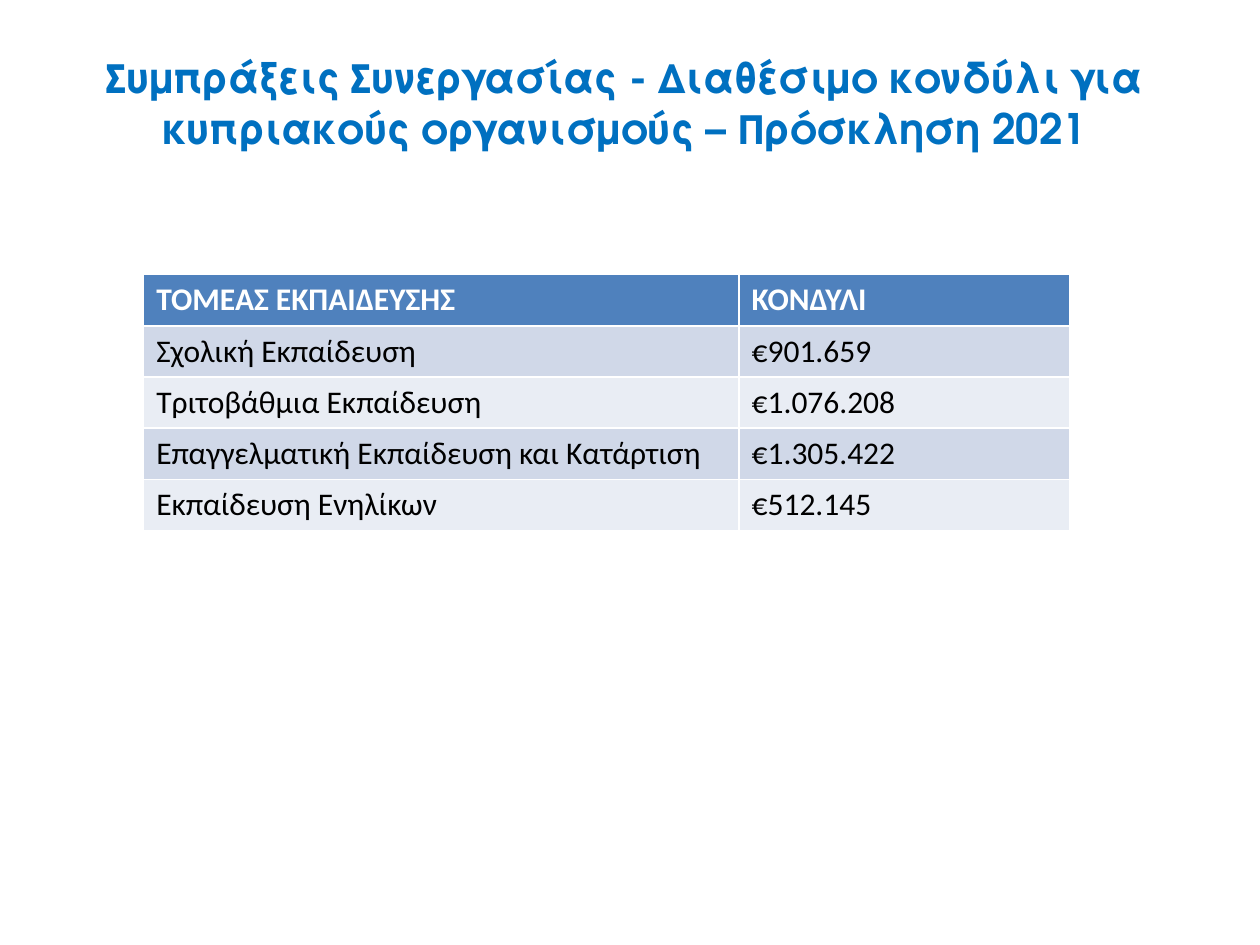
import pptx
import pptx.dml.color
import pptx.enum.text
import pptx.util
from pptx.util import Inches

TITLE = "Συμπράξεις Συνεργασίας - Διαθέσιμο κονδύλι για κυπριακούς οργανισμούς – Πρόσκληση 2021"
HEADINGS = ("ΤΟΜΕΑΣ ΕΚΠΑΙΔΕΥΣΗΣ", "ΚΟΝΔΥΛΙ")
BUDGETS = (
    ("Σχολική Εκπαίδευση", "€901.659"),
    ("Τριτοβάθμια Εκπαίδευση", "€1.076.208"),
    ("Επαγγελματική Εκπαίδευση και Κατάρτιση", "€1.305.422"),
    ("Εκπαίδευση Ενηλίκων", "€512.145"),
)
BANDS = ("D0D8E8", "E9EDF4")
SECTOR_SHARE = 0.643


def color(hex_value):
    """Return the colour for a hex string."""
    return pptx.dml.color.RGBColor.from_string(hex_value)


def style_font(font, name, size, hex_value, bold):
    """Set the face, size, colour and weight of a font."""
    font.name = name
    font.size = pptx.util.Pt(size)
    font.bold = bold
    font.color.rgb = color(hex_value)


def place_title(slide, left, top, width, height):
    """Move and format the title placeholder."""
    title = slide.shapes.title
    title.left, title.top = Inches(left), Inches(top)
    title.width, title.height = Inches(width), Inches(height)
    frame = title.text_frame
    frame.text = TITLE
    frame.word_wrap = True
    frame.auto_size = pptx.enum.text.MSO_AUTO_SIZE.NONE
    frame.vertical_anchor = pptx.enum.text.MSO_ANCHOR.MIDDLE
    heading = frame.paragraphs[0]
    heading.alignment = pptx.enum.text.PP_ALIGN.CENTER
    style_font(heading.font, "TeX Gyre Adventor", 24, "0070C0", True)


def place_budget_table(slide, left, top, width, height):
    """Add the table of available funds by education sector."""
    rows = (HEADINGS,) + BUDGETS
    budget = slide.shapes.add_table(
        len(rows), len(HEADINGS), Inches(left), Inches(top), Inches(width), Inches(height)
    ).table
    budget.columns[0].width = Inches(width * SECTOR_SHARE)
    budget.columns[1].width = Inches(width * (1 - SECTOR_SHARE))
    for row, entries in enumerate(rows):
        is_heading = row == 0
        fill = "4F81BD" if is_heading else BANDS[(row - 1) % 2]
        ink = "FFFFFF" if is_heading else "000000"
        for column, entry in enumerate(entries):
            cell = budget.cell(row, column)
            cell.text = entry
            cell.fill.solid()
            cell.fill.fore_color.rgb = color(fill)
            style_font(cell.text_frame.paragraphs[0].font, "Calibri", 18, ink, is_heading)


def main():
    """Build and save the slide."""
    deck = pptx.Presentation()
    deck.slide_width, deck.slide_height = Inches(10), Inches(7.5)
    slide = deck.slides.add_slide(deck.slide_layouts[5])
    place_title(slide, 0.12, 0.29, 9.67, 1.04)
    place_budget_table(slide, 1.14, 2.18, 7.35, 2.03)
    deck.save("out.pptx")


if __name__ == "__main__":
    main()
